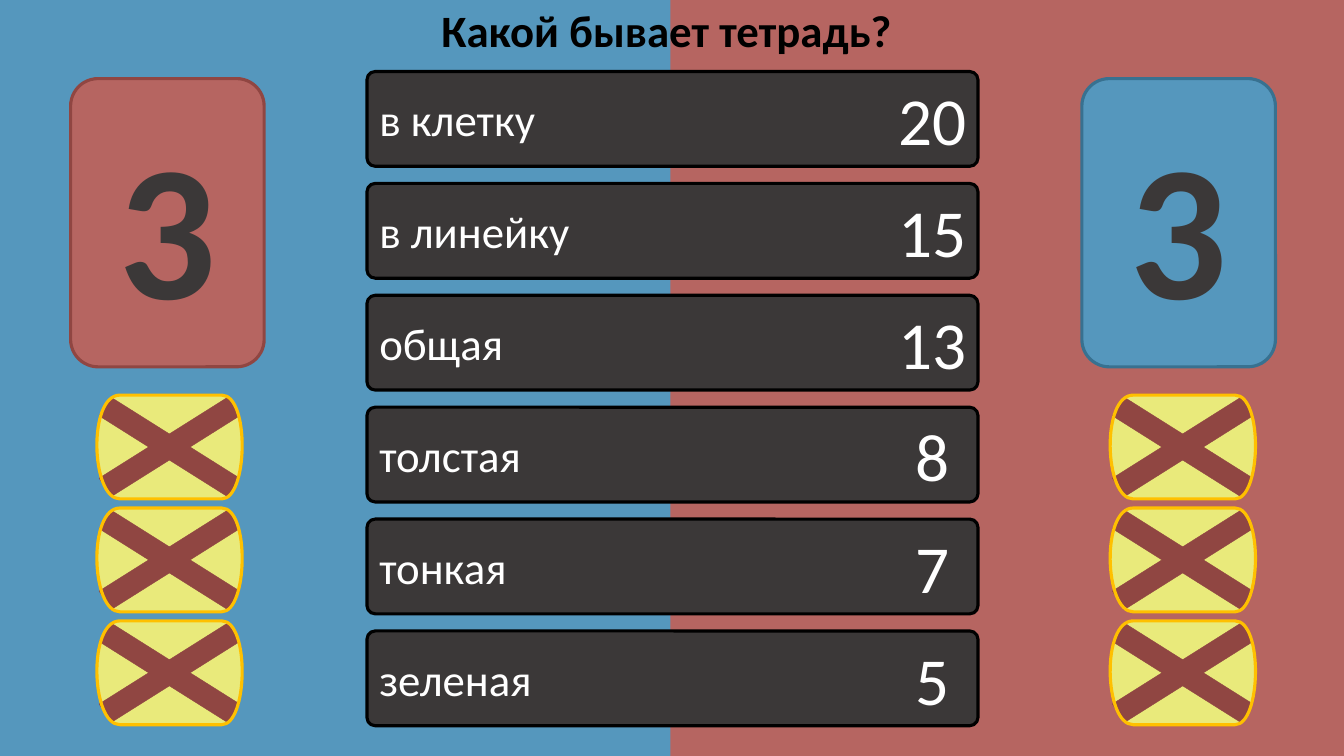
from dataclasses import dataclass
from lxml import etree
from pptx import Presentation
from pptx.dml.color import RGBColor
from pptx.enum.shapes import MSO_SHAPE
from pptx.enum.text import MSO_ANCHOR, PP_ALIGN
from pptx.oxml.ns import qn
from pptx.util import Inches, Pt

RECT, ROUND = MSO_SHAPE.RECTANGLE, MSO_SHAPE.ROUNDED_RECTANGLE
MID, TOP = MSO_ANCHOR.MIDDLE, MSO_ANCHOR.TOP
LEFT, CENTER = PP_ALIGN.LEFT, PP_ALIGN.CENTER


@dataclass(frozen=True)
class Theme:
    font: str = "Calibri"
    blue: str = "5597BD"
    navy: str = "387190"
    red: str = "B66561"
    wine: str = "904642"
    dark: str = "3B3838"
    black: str = "000000"
    white: str = "FFFFFF"
    cream: str = "E9EA7B"
    gold: str = "FFC000"
    body: int = 32
    score: int = 48
    giant: int = 138
    edge: float = 2.25
    hair: float = 0.25


T = Theme()
WIDE, HIGH = 13.33, 7.5
SPLIT, HALF = 6.65, 6.68
CARD_LEFT, CARD_SHIFT, MARK_SHIFT = 0.7, 10.03, 10.05
ROW_TOP, ROW_STEP, ROW_HIGH = 0.71, 1.11, 0.94
ROW_LEFT, ROW_WIDE, SCORE_WIDE = 3.64, 6.06, 0.88
MARK_LEFT, MARK_TOP, MARK_STEP = 0.96, 3.92, 1.12
MARK_WIDE, MARK_HIGH = 1.44, 1.03
BAR_WIDE, BAR_HIGH, TILT = 1.51, 0.22, 32.2
BARREL = [("moveTo", [(0.23, 0)]),
          ("lnTo", [(1.24, 0)]),
          ("cubicBezTo", [(1.52, 0), (1.5, MARK_HIGH), (1.24, MARK_HIGH)]),
          ("lnTo", [(0.23, MARK_HIGH)]),
          ("cubicBezTo", [(-0.06, MARK_HIGH), (-0.09, 0), (0.23, 0)]),
          ("close", [])]
TITLE = "Какой бывает тетрадь?"
ROWS = [("в клетку", 20), ("в линейку", 15), ("общая", 13),
        ("толстая", 8), ("тонкая", 7), ("зеленая", 5)]


def color(code):
    return RGBColor.from_string(code)


def paint(shape, fill=None, line=None, width=T.edge):
    shape.shadow.inherit = False
    if fill:
        shape.fill.solid()
        shape.fill.fore_color.rgb = color(fill)
    else:
        shape.fill.background()
    if line:
        shape.line.color.rgb = color(line)
        shape.line.width = Pt(width)
    else:
        shape.line.fill.background()


def block(shapes, kind, box, fill, line=None, width=T.edge, round=None):
    shape = shapes.add_shape(kind, *map(Inches, box))
    paint(shape, fill, line, width)
    if round is not None:
        shape.adjustments[0] = round
    return shape


def write(shape, text, size, ink, align=LEFT, bold=False, **frame):
    body = shape.text_frame
    for key, val in {"word_wrap": True, "vertical_anchor": MID, **frame}.items():
        setattr(body, key, val)
    para = body.paragraphs[0]
    para.alignment = align
    run = para.add_run()
    run.text = text
    for key, val in {"name": T.font, "size": Pt(size), "bold": bold}.items():
        setattr(run.font, key, val)
    run.font.color.rgb = color(ink)


def label(shapes, box, *args, **frame):
    write(shapes.add_textbox(*map(Inches, box)), *args, **frame)


def barrel(shapes, left, top, **look):
    right, base = left + MARK_WIDE, top + MARK_HIGH
    pen = shapes.build_freeform(Inches(left), Inches(top))
    pen.add_line_segments([(Inches(x), Inches(y)) for x, y in
                           ((right, top), (right, base), (left, base))])
    shape = pen.convert_to_shape()
    trace = shape.element.find(".//" + qn("a:path"))
    for node in list(trace):
        trace.remove(node)
    for step, points in BARREL:
        node = etree.SubElement(trace, qn("a:" + step))
        for x, y in points:
            etree.SubElement(node, qn("a:pt"), x=str(Inches(x)), y=str(Inches(y)))
    paint(shape, **look)


def mark(shapes, left, top):
    barrel(shapes, left, top, fill=T.cream)
    cross = shapes.add_group_shape().shapes
    box = (left + (MARK_WIDE - BAR_WIDE) / 2, top + (MARK_HIGH - BAR_HIGH) / 2,
           BAR_WIDE, BAR_HIGH)
    for turn in (TILT, -TILT):
        block(cross, RECT, box, T.wine, T.wine, T.hair).rotation = turn
    barrel(shapes, left, top, line=T.gold)


def card(shapes, left, fill, line):
    shape = block(shapes, ROUND, (left, 0.78, 1.92, 2.86), fill, line, round=0.142)
    write(shape, "3", T.giant, T.dark, CENTER, True)


def answer(shapes, row, text):
    bar = block(shapes, ROUND, (ROW_LEFT, ROW_TOP + row * ROW_STEP, ROW_WIDE, ROW_HIGH),
                T.dark, T.black, round=0.087)
    write(bar, text, T.body, T.white)


def points(shapes, row, score):
    label(shapes, (ROW_LEFT + ROW_WIDE - SCORE_WIDE - 0.01, ROW_TOP + row * ROW_STEP,
                   SCORE_WIDE, ROW_HIGH),
          str(score), T.score, T.white, CENTER, margin_left=0, margin_right=0)


def main():
    deck = Presentation()
    deck.slide_width, deck.slide_height = Inches(WIDE), Inches(HIGH)
    shapes = deck.slides.add_slide(deck.slide_layouts[6]).shapes
    sides = [(T.blue, T.red, T.wine), (T.red, T.blue, T.navy)]
    for side, (back, _, _) in enumerate(sides):
        block(shapes, RECT, (side * SPLIT, 0, HALF, HIGH), back)
    for side, (_, fill, line) in enumerate(sides):
        card(shapes, CARD_LEFT + side * CARD_SHIFT, fill, line)
    for row, (text, _) in enumerate(ROWS):
        answer(shapes, row, text)
    for row, (_, score) in enumerate(ROWS):
        points(shapes, row, score)
    for side in range(len(sides)):
        for row in reversed(range(3)):
            mark(shapes, MARK_LEFT + side * MARK_SHIFT, MARK_TOP + row * MARK_STEP)
    label(shapes, (4.28, -0.02, 4.87, 0.64), TITLE, T.body, T.black, LEFT, True,
          word_wrap=False, vertical_anchor=TOP)
    deck.save("out.pptx")


main()
